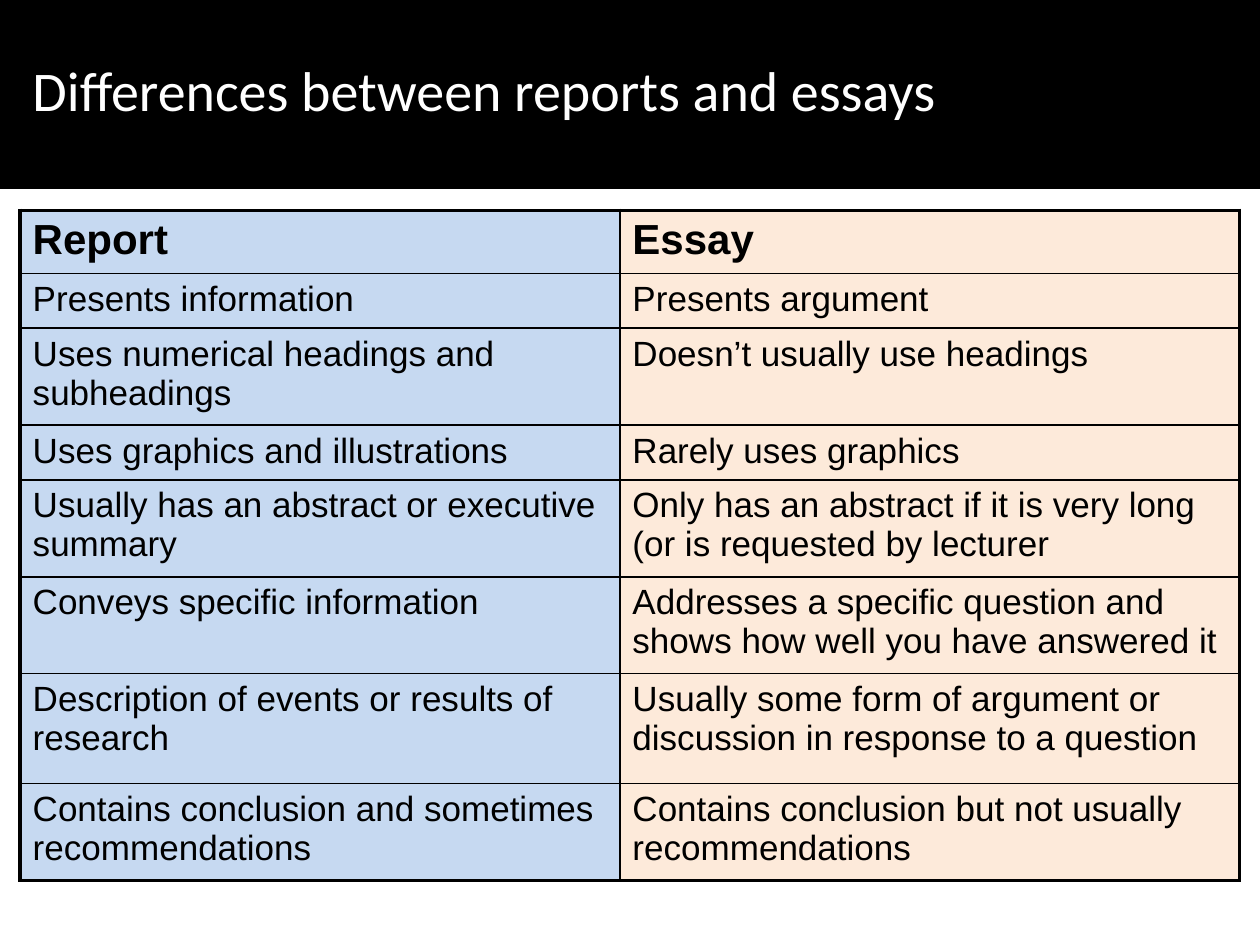
from lxml import etree
from pptx import Presentation
from pptx.dml.color import RGBColor
from pptx.enum.shapes import MSO_SHAPE as Shape
from pptx.enum.text import MSO_AUTO_SIZE as AutoSize
from pptx.oxml import parse_xml
from pptx.oxml.ns import nsdecls, qn
from pptx.util import Inches, Pt

BLACK = RGBColor(0x00, 0x00, 0x00)
WHITE = RGBColor(0xFF, 0xFF, 0xFF)
BLUE = RGBColor(0xC6, 0xD9, 0xF1)
PEACH = RGBColor(0xFD, 0xEA, 0xDA)

THIN, THICK = Pt(1), Pt(2.25)

COMPARISON = [
    ("Report", "Essay", 0.5),
    ("Presents information", "Presents argument", 0.43),
    ("Uses numerical headings and subheadings", "Doesn’t usually use headings", 0.77),
    ("Uses graphics and illustrations", "Rarely uses graphics", 0.43),
    ("Usually has an abstract or executive summary",
     "Only has an abstract if it is very long (or is requested by lecturer", 0.77),
    ("Conveys specific information",
     "Addresses a specific question and shows how well you have answered it", 0.77),
    ("Description of events or results of research",
     "Usually some form of argument or discussion in response to a question", 0.87),
    ("Contains conclusion and sometimes recommendations",
     "Contains conclusion but not usually recommendations", 0.77),
]
COLUMN_WIDTHS = (4.76, 4.92)
HEADING_FONT = {"name": "Arial", "size": Pt(24), "bold": True}
BODY_FONT = {"name": "Arial", "size": Pt(20), "bold": False}
TITLE_FONT = {"name": "Calibri", "size": Pt(32), "bold": False}


def write(frame, text, style, colour):
    paragraph = frame.paragraphs[0]
    run = paragraph.add_run()
    run.text = text
    for name, value in style.items():
        setattr(run.font, name, value)
    run.font.color.rgb = colour


def set_borders(cell, widths):
    # Border lines come before the fill, in the order left, right, top, bottom
    properties = cell._tc.get_or_add_tcPr()
    for position, (side, width) in enumerate(widths.items()):
        line = parse_xml(f'<a:ln{side} {nsdecls("a")} w="{width}"/>')
        fill = etree.SubElement(line, qn("a:solidFill"))
        etree.SubElement(fill, qn("a:srgbClr"), val=str(BLACK))
        properties.insert(position, line)


prs = Presentation()
prs.slide_width, prs.slide_height = Inches(10), Inches(7.5)
slide = prs.slides.add_slide(prs.slide_layouts[6])

# Title band
band = slide.shapes.add_shape(Shape.RECTANGLE, 0, 0, prs.slide_width, Inches(1.5))
band.shadow.inherit = False
band.fill.solid()
band.fill.fore_color.rgb = BLACK
band.line.fill.background()

# Title
title = slide.shapes.add_textbox(Inches(0.16), Inches(0.39), Inches(7.43), Inches(0.64))
title.text_frame.word_wrap = True
title.text_frame.auto_size = AutoSize.SHAPE_TO_FIT_TEXT
write(title.text_frame, "Differences between reports and essays", TITLE_FONT, WHITE)

# Comparison table
last_row = len(COMPARISON) - 1
table = slide.shapes.add_table(
    len(COMPARISON), len(COLUMN_WIDTHS), Inches(0.16), Inches(1.67),
    Inches(sum(COLUMN_WIDTHS)), Inches(sum(row[2] for row in COMPARISON))).table
table.first_row = table.horz_banding = False
for column, width in zip(table.columns, COLUMN_WIDTHS):
    column.width = Inches(width)

for r, (report, essay, height) in enumerate(COMPARISON):
    table.rows[r].height = Inches(height)
    for c, (text, colour) in enumerate([(report, BLUE), (essay, PEACH)]):
        cell = table.cell(r, c)
        cell.fill.solid()
        cell.fill.fore_color.rgb = colour
        write(cell.text_frame, text, HEADING_FONT if r == 0 else BODY_FONT, BLACK)
        # Thick outer frame, thin inner rules
        set_borders(cell, {
            "L": THICK if c == 0 else THIN,
            "R": THICK if c == 1 else THIN,
            "T": THICK if r == 0 else THIN,
            "B": THICK if r == last_row else THIN,
        })

prs.save("out.pptx")
